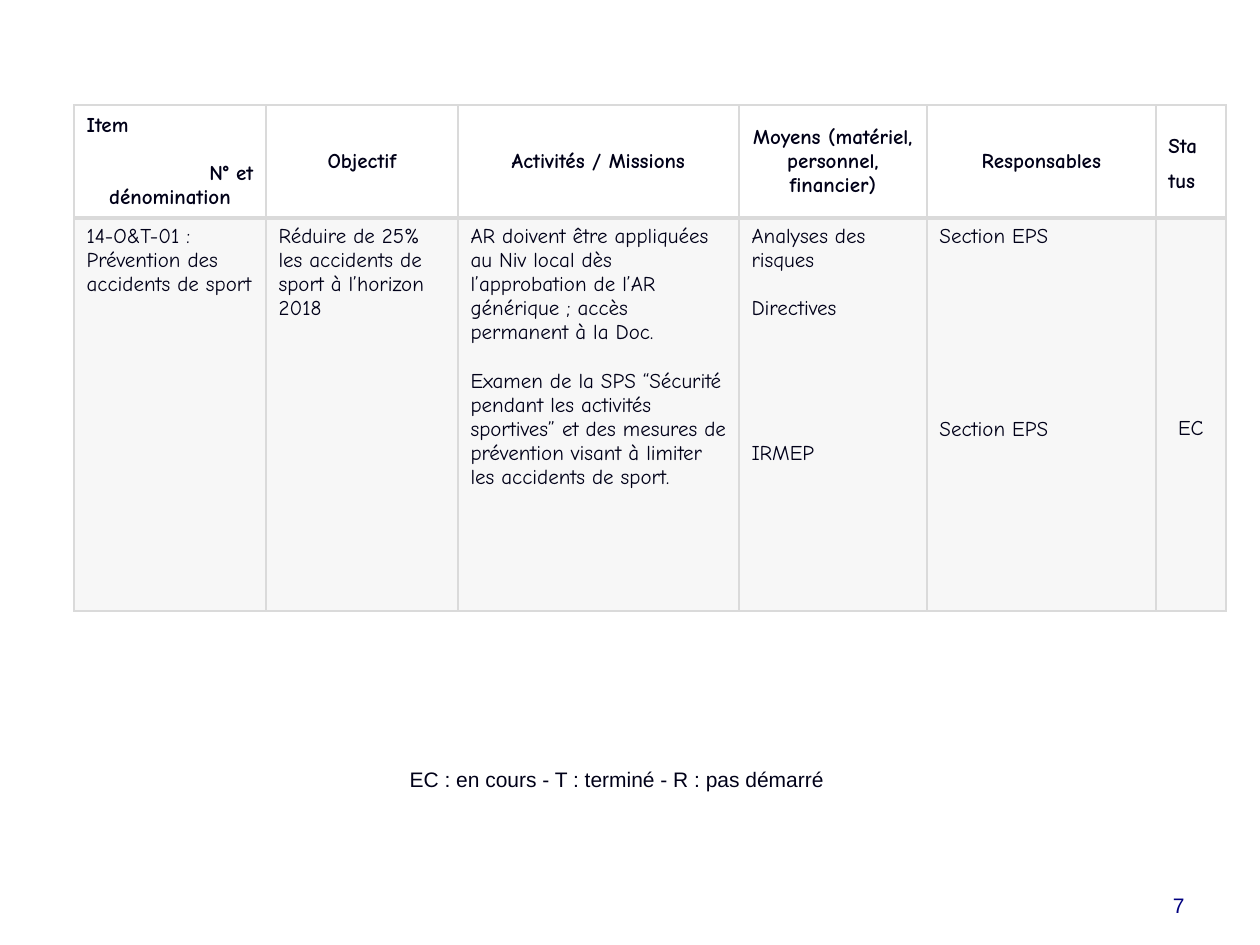
from lxml.etree import SubElement
from pptx import Presentation
from pptx.dml.color import RGBColor
from pptx.enum.text import MSO_ANCHOR as MA, PP_ALIGN as PA
from pptx.oxml.ns import qn
from pptx.util import Pt

COLORS = {"text": "000018", "number": "000080", "grid": "DADADA"}
LINE = 13.8


def px(n):
    return round(n * 914400 / 126)


def write(tf, paras, font, color="text", bold=False):
    tf.word_wrap = True
    for i, (text, align, gap) in enumerate(paras):
        p = tf.paragraphs[0] if i == 0 else tf.add_paragraph()
        p.text = text
        p.alignment = align
        if gap:
            p.space_before = Pt(gap)
        p.font.name = font
        p.font.size = Pt(12)
        p.font.bold = bold
        p.font.color.rgb = RGBColor.from_string(COLORS[color])


prs = Presentation()
prs.slide_width, prs.slide_height = px(1260), px(945)
s = prs.slides.add_slide(prs.slide_layouts[6])

L, C, R = PA.LEFT, PA.CENTER, PA.RIGHT
widths = [192, 192, 281, 188, 229, 70]
heights = [113, 393]
header = [
    [("Item", L, 0), ("N° et", R, LINE), ("dénomination", C, 0)],
    [("Objectif", C, 0)],
    [("Activités / Missions", C, 0)],
    [("Moyens (matériel, personnel, financier)", C, 0)],
    [("Responsables", C, 0)],
    [("Sta", L, 0), ("tus", L, 6)],
]
body = [
    [("14-O&T-01 : Prévention des accidents de sport", L, 0)],
    [("Réduire de 25% les accidents de sport à l’horizon 2018", L, 0)],
    [("AR doivent être appliquées au Niv local dès l’approbation de l’AR "
      "générique ; accès permanent à la Doc.", L, 0),
     ("Examen de la SPS “Sécurité pendant les activités sportives” et des mesures "
      "de prévention visant à limiter les accidents de sport.", L, LINE)],
    [("Analyses des risques", L, 0), ("Directives", L, LINE), ("IRMEP", L, 5 * LINE)],
    [("Section EPS", L, 0), ("Section EPS", L, 7 * LINE)],
    [("EC", C, 0)],
]

frame = s.shapes.add_table(2, 6, px(74), px(105), px(sum(widths)), px(sum(heights)))
table = frame.table
table.first_row = table.horz_banding = False
for col, width in zip(table.columns, widths):
    col.width = px(width)
for row, height in zip(table.rows, heights):
    row.height = px(height)

for r, cells in enumerate([header, body]):
    for c, paras in enumerate(cells):
        cell = table.cell(r, c)
        cell.vertical_anchor = MA.MIDDLE if r == 0 else MA.TOP
        write(cell.text_frame, paras, "Comic Neue", bold=r == 0)
        tcPr = cell._tc.get_or_add_tcPr()
        for side in "LRTB":
            weight = 2 if (r, side) in [(0, "B"), (1, "T")] else 1
            ln = SubElement(tcPr, qn(f"a:ln{side}"), w=str(Pt(weight)))
            fill = SubElement(ln, qn("a:solidFill"))
            SubElement(fill, qn("a:srgbClr"), val=COLORS["grid"])
        if r == 0:
            cell.fill.background()
        else:
            cell.fill.solid()
            cell.fill.fore_color.rgb = RGBColor.from_string(COLORS["grid"])
            clr = tcPr.find(qn("a:solidFill")).find(qn("a:srgbClr"))
            SubElement(clr, qn("a:alpha"), val="20000")

status = table.cell(0, 5)
status.vertical_anchor = MA.TOP
status.margin_top = px(30)
table.cell(1, 5).margin_top = px(199)

legend = s.shapes.add_textbox(px(302), px(760), px(630), px(38))
write(legend.text_frame, [("EC : en cours - T : terminé - R : pas démarré", C, 0)], "Arial")

number = s.shapes.add_textbox(px(903), px(861), px(294), px(63))
number.text_frame.vertical_anchor = MA.BOTTOM
write(number.text_frame, [("7", R, 0)], "Arial", "number")

prs.save("out.pptx")
